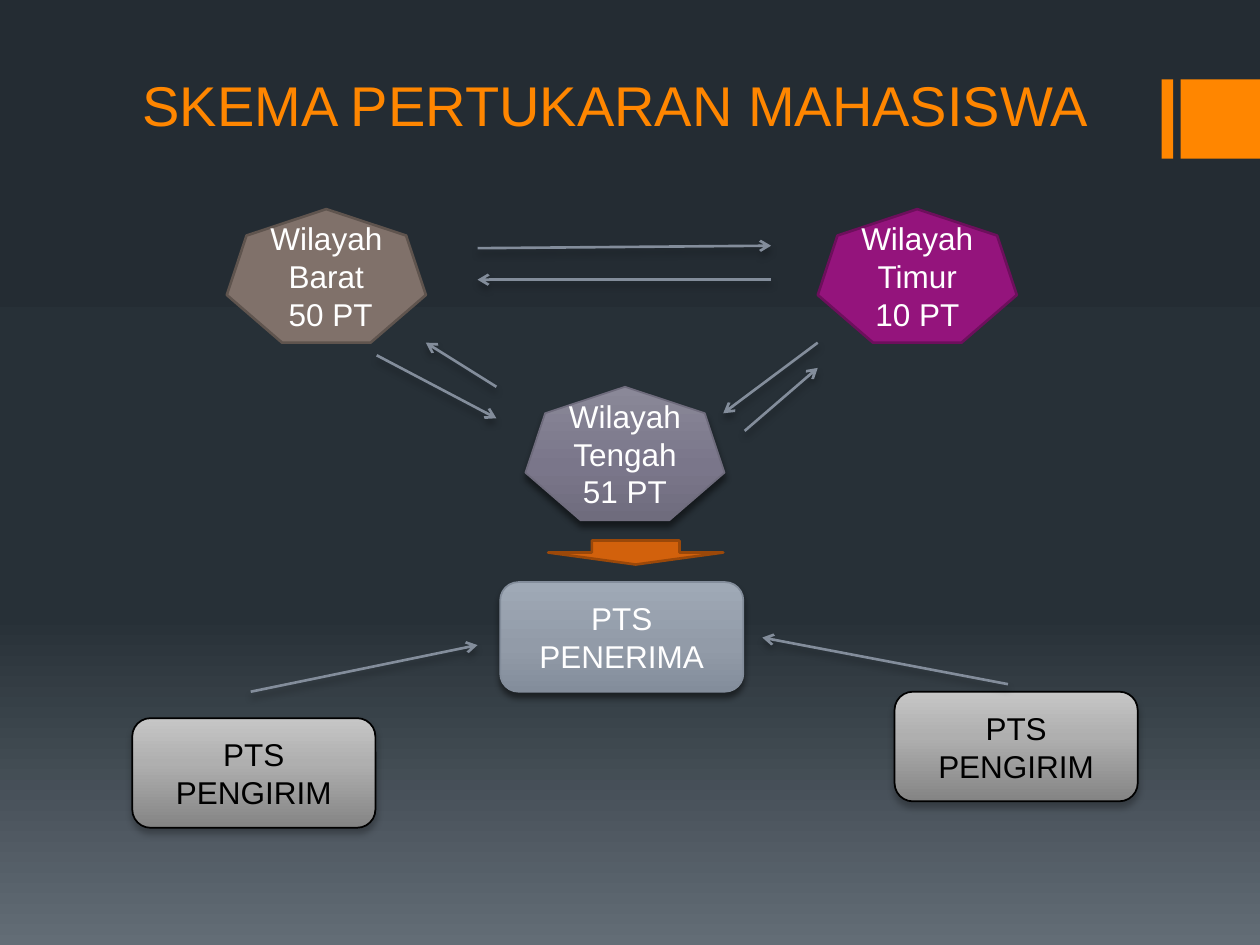
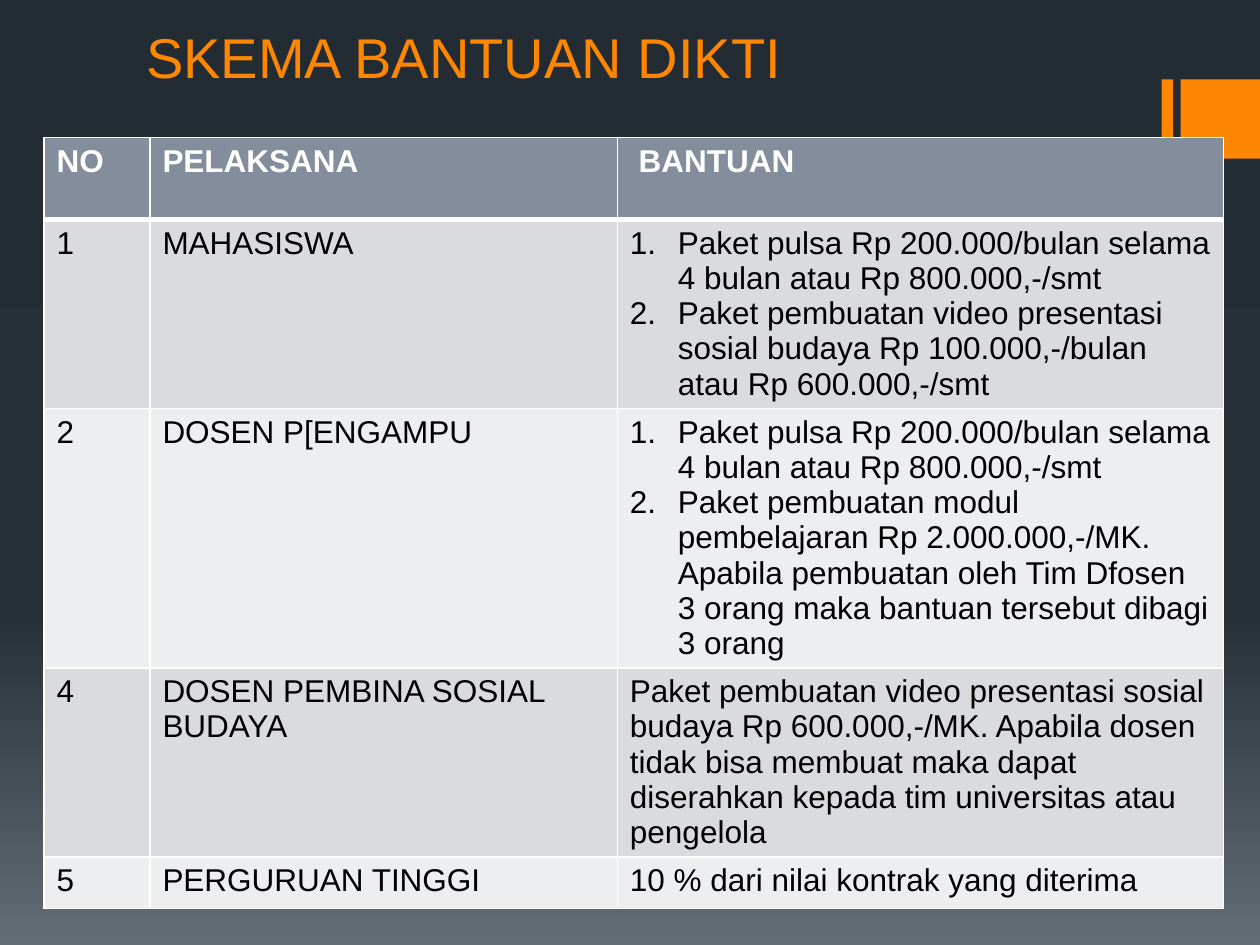
from dataclasses import dataclass

from lxml import etree
from pptx import Presentation
from pptx.dml.color import RGBColor
from pptx.enum.shapes import MSO_CONNECTOR, MSO_SHAPE
from pptx.enum.text import MSO_ANCHOR, MSO_AUTO_SIZE, PP_ALIGN
from pptx.oxml.ns import qn
from pptx.util import Inches, Pt

HEPTAGON = MSO_SHAPE.HEPTAGON
ROUNDED = MSO_SHAPE.ROUNDED_RECTANGLE
RECTANGLE = MSO_SHAPE.RECTANGLE
DOWN_ARROW = MSO_SHAPE.DOWN_ARROW
STRAIGHT = MSO_CONNECTOR.STRAIGHT
LEFT, CENTER = PP_ALIGN.LEFT, PP_ALIGN.CENTER
MIDDLE, BOTTOM = MSO_ANCHOR.MIDDLE, MSO_ANCHOR.BOTTOM
NO_AUTOFIT = MSO_AUTO_SIZE.NONE

FONT = "Arial"
ORANGE, WHITE, BLACK, SLATE = "FF8600", "FFFFFF", "000000", "838D9B"
ROW_FILLS = ("D9DBDE", "EDEEEF")
BACKDROP = ((0, "242C33"), (65, "273037"), (100, "636D76"))
PURPLE_FADE = ((0, "8A8898"), (60, "7A768A"), (100, "6F6C7D"))
SLATE_FADE = ((0, "9FA9B6"), (60, "929BA8"), (100, SLATE))
GREY_FADE = ((0, "C6C6C6"), (41, "AFAFAF"), (100, "848484"))

REGION_SIZE = (1.58, 1.06)
CAMPUS_SIZE = (1.93, 0.87)


@dataclass
class Shadow:
    opacity: int
    blur: float
    distance: float = 3


SOFT, STRONG = Shadow(28, 4), Shadow(48, 3.8)


@dataclass
class Node:
    kind: int
    left: float
    top: float
    size: tuple
    fill: object
    outline: str = ""
    outline_width: float = 1
    lines: tuple = ()
    ink: str = WHITE
    shadow: Shadow | None = None


@dataclass
class Flow:
    start: tuple
    end: tuple


@dataclass
class Aid:
    number: str
    recipient: str
    support: tuple


BANDS = (
    Node(RECTANGLE, 9.22, 0.63, (0.09, 0.63), ORANGE),
    Node(RECTANGLE, 9.37, 0.63, (0.63, 0.63), ORANGE),
)

EXCHANGE_NODES = (
    Node(HEPTAGON, 1.8, 1.66, REGION_SIZE, "80716A", "5F544E", 1.5,
         ("Wilayah Barat", " 50 PT")),
    Node(HEPTAGON, 4.17, 3.07, REGION_SIZE, PURPLE_FADE, "6F6C7D", 1,
         ("Wilayah Tengah", "51 PT"), shadow=STRONG),
    Node(HEPTAGON, 6.49, 1.66, REGION_SIZE, "94147C", "6D0F5C", 1.5,
         ("Wilayah Timur", "10 PT")),
    Node(ROUNDED, 3.97, 4.62, CAMPUS_SIZE, SLATE_FADE, SLATE, 1,
         ("PTS PENERIMA",), shadow=STRONG),
    Node(ROUNDED, 7.1, 5.49, CAMPUS_SIZE, GREY_FADE, BLACK, 1,
         ("PTS PENGIRIM",), BLACK, SOFT),
    Node(ROUNDED, 1.05, 5.7, CAMPUS_SIZE, GREY_FADE, BLACK, 1,
         ("PTS PENGIRIM",), BLACK, SOFT),
    Node(DOWN_ARROW, 4.35, 4.29, (1.39, 0.19), "D2610C", "9B4809", 1.5),
)

EXCHANGE_FLOWS = (
    Flow((3.79, 1.97), (6.12, 1.95)),
    Flow((6.12, 2.22), (3.79, 2.22)),
    Flow((6.49, 2.72), (5.74, 3.28)),
    Flow((5.91, 3.42), (6.49, 2.92)),
    Flow((3.94, 3.07), (3.38, 2.72)),
    Flow((2.99, 2.82), (3.94, 3.32)),
    Flow((1.99, 5.49), (3.79, 5.12)),
    Flow((8, 5.43), (6.05, 5.06)),
)

PHONE_CREDIT = "Paket pulsa Rp 200.000/bulan selama 4 bulan atau Rp 800.000,-/smt"
AID_HEADINGS = ("NO", "PELAKSANA", " BANTUAN")
AID_ROWS = (
    Aid("1", "MAHASISWA", (
        PHONE_CREDIT,
        "Paket pembuatan video presentasi sosial budaya "
        "Rp 100.000,-/bulan atau Rp 600.000,-/smt")),
    Aid("2", "DOSEN P[ENGAMPU", (
        PHONE_CREDIT,
        "Paket pembuatan modul pembelajaran Rp 2.000.000,-/MK. "
        "Apabila pembuatan oleh Tim Dfosen 3 orang maka bantuan "
        "tersebut dibagi 3 orang")),
    Aid("4", "DOSEN PEMBINA SOSIAL BUDAYA", (
        "Paket pembuatan video presentasi sosial budaya "
        "Rp 600.000,-/MK. Apabila dosen tidak bisa membuat maka dapat "
        "diserahkan kepada tim universitas atau pengelola",)),
    Aid("5", "PERGURUAN TINGGI", ("10 % dari nilai kontrak yang diterima",)),
)
AID_COLUMNS = (0.84, 3.71, 4.81)
AID_HEIGHTS = (0.65, 1.5, 2.06, 1.5, 0.41)


def rgb(value: str) -> RGBColor:
    return RGBColor.from_string(value)


def add_xml(parent, tag: str, **attributes):
    return etree.SubElement(parent, qn(tag), {k: str(v) for k, v in attributes.items()})


def paint(fill, owner, paint_value) -> None:
    if isinstance(paint_value, str):
        fill.solid()
        fill.fore_color.rgb = rgb(paint_value)
        return
    fill.gradient()
    fill.gradient_angle = 270
    stops = owner.find(".//" + qn("a:gsLst"))
    for stop in list(stops):
        stops.remove(stop)
    for position, color in paint_value:
        stop = add_xml(stops, "a:gs", pos=position * 1000)
        add_xml(stop, "a:srgbClr", val=color)


def cast_shadow(effects, shadow: Shadow) -> None:
    outer = add_xml(effects, "a:outerShdw", blurRad=Pt(shadow.blur),
                    dist=Pt(shadow.distance), dir=5400000, rotWithShape=0)
    color = add_xml(outer, "a:srgbClr", val=BLACK)
    add_xml(color, "a:alpha", val=shadow.opacity * 1000)


def write(frame, lines: tuple, size: float, ink: str, align: int, bold: bool = False) -> None:
    for index, line in enumerate(lines):
        paragraph = frame.add_paragraph() if index else frame.paragraphs[0]
        paragraph.alignment = align
        run = paragraph.add_run()
        run.text = line
        run.font.name = FONT
        run.font.size = Pt(size)
        run.font.bold = bold
        run.font.color.rgb = rgb(ink)


def draw_node(slide, node: Node) -> None:
    shape = slide.shapes.add_shape(node.kind, Inches(node.left), Inches(node.top),
                                   *map(Inches, node.size))
    shape.shadow.inherit = False
    paint(shape.fill, shape.element, node.fill)
    if node.outline:
        shape.line.color.rgb = rgb(node.outline)
        shape.line.width = Pt(node.outline_width)
    else:
        shape.line.fill.background()
    if node.shadow:
        cast_shadow(shape.element.find(".//" + qn("a:effectLst")), node.shadow)
    shape.text_frame.word_wrap = True
    shape.text_frame.vertical_anchor = MIDDLE
    write(shape.text_frame, node.lines, 18, node.ink, CENTER)


def draw_flow(slide, flow: Flow) -> None:
    arrow = slide.shapes.add_connector(STRAIGHT, *map(Inches, flow.start + flow.end))
    arrow.line.color.rgb = rgb(SLATE)
    arrow.line.width = Pt(1.5)
    add_xml(arrow.element.find(".//" + qn("a:ln")), "a:tailEnd", type="arrow")
    cast_shadow(add_xml(arrow.element.spPr, "a:effectLst"), SOFT)


def start_slide(deck, heading: str, left: float, top: float, width: float):
    slide = deck.slides.add_slide(deck.slide_layouts[5])
    for band in BANDS:
        draw_node(slide, band)
    title = slide.shapes.title
    title.left, title.top = Inches(left), Inches(top)
    title.width, title.height = Inches(width), Inches(1.26)
    frame = title.text_frame
    frame.word_wrap = True
    frame.auto_size = NO_AUTOFIT
    frame.vertical_anchor = BOTTOM
    write(frame, (heading,), 32, ORANGE, LEFT)
    return slide


def number_items(frame) -> None:
    indent = Inches(0.38)
    for paragraph in frame.paragraphs:
        properties = paragraph._p.get_or_add_pPr()
        properties.set("marL", str(indent))
        properties.set("indent", str(-indent))
        add_xml(properties, "a:buFont", typeface="+mj-lt")
        add_xml(properties, "a:buAutoNum", type="arabicPeriod")


def border_cell(cell, top: float, bottom: float) -> None:
    properties = cell._tc.get_or_add_tcPr()
    widths = {"a:lnL": 1, "a:lnR": 1, "a:lnT": top, "a:lnB": bottom}
    for index, (tag, width) in enumerate(widths.items()):
        edge = add_xml(properties, tag, w=Pt(width))
        add_xml(add_xml(edge, "a:solidFill"), "a:srgbClr", val=WHITE)
        properties.insert(index, edge)


def draw_aid_table(slide) -> None:
    rows = [tuple((heading,) for heading in AID_HEADINGS)]
    rows += [((aid.number,), (aid.recipient,), aid.support) for aid in AID_ROWS]
    table = slide.shapes.add_table(
        len(rows), len(AID_COLUMNS), Inches(0.35), Inches(1.09),
        Inches(sum(AID_COLUMNS)), Inches(sum(AID_HEIGHTS))).table
    for column, width in zip(table.columns, AID_COLUMNS):
        column.width = Inches(width)
    for index, (height, contents) in enumerate(zip(AID_HEIGHTS, rows)):
        table.rows[index].height = Inches(height)
        header = index == 0
        for cell, lines in zip(table.rows[index].cells, contents):
            paint(cell.fill, cell._tc, SLATE if header else ROW_FILLS[(index - 1) % 2])
            border_cell(cell, 3 if index == 1 else 1, 3 if header else 1)
            write(cell.text_frame, lines, 18, WHITE if header else BLACK, LEFT, header)
            if len(lines) > 1:
                number_items(cell.text_frame)


def main() -> None:
    deck = Presentation()
    deck.slide_width, deck.slide_height = Inches(10), Inches(7.5)
    master = deck.slide_master
    paint(master.background.fill, master.element.find(".//" + qn("p:bg")), BACKDROP)

    exchange = start_slide(deck, "SKEMA PERTUKARAN MAHASISWA", 1.03, -0.12, 8)
    for node in EXCHANGE_NODES:
        draw_node(exchange, node)
    for flow in EXCHANGE_FLOWS:
        draw_flow(exchange, flow)

    draw_aid_table(start_slide(deck, "SKEMA BANTUAN DIKTI", 1.06, -0.5, 9))
    deck.save("out.pptx")


if __name__ == "__main__":
    main()
